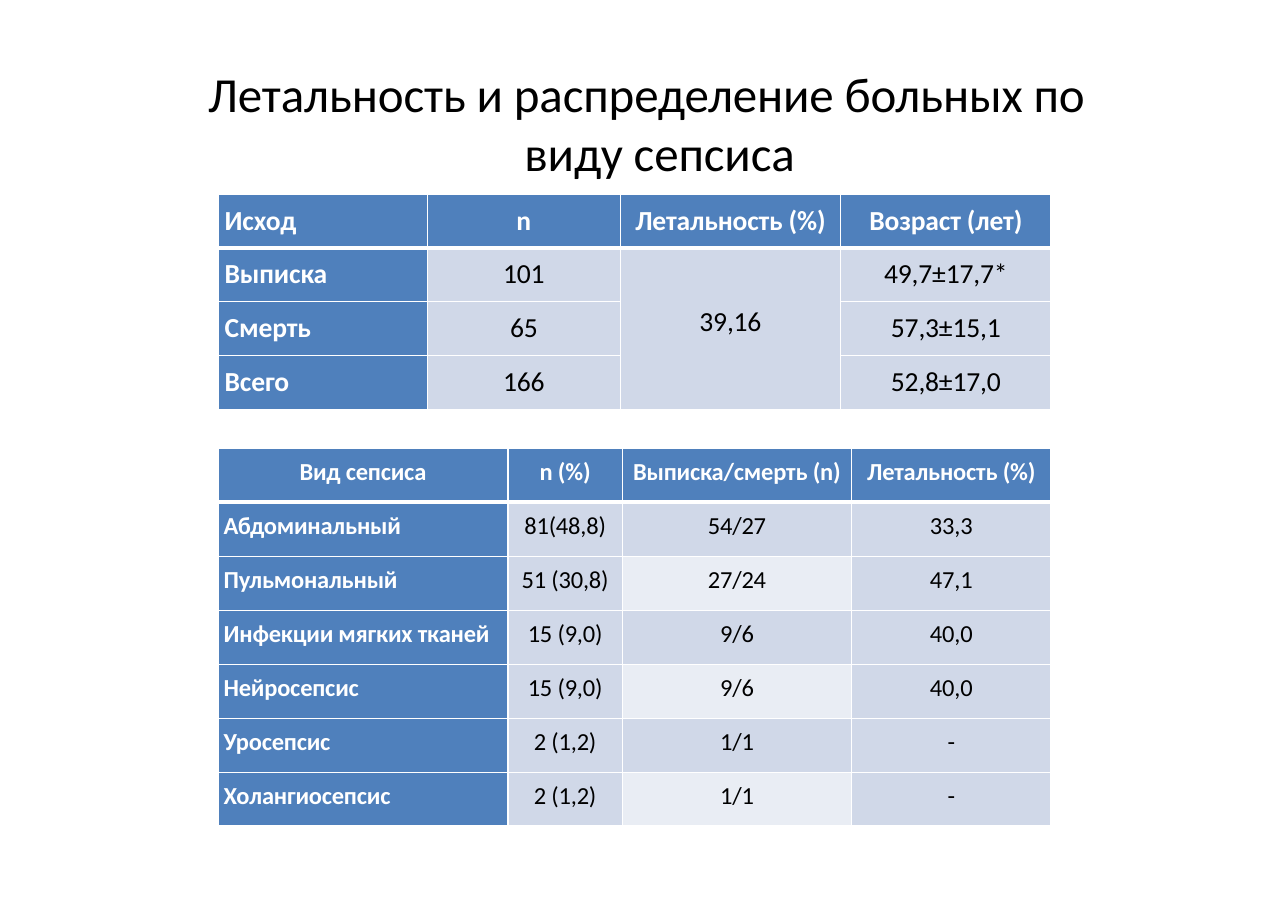
from pptx import Presentation
from pptx.dml.color import RGBColor
from pptx.enum.text import MSO_ANCHOR, PP_ALIGN
from pptx.oxml.ns import qn
from pptx.util import Inches, Pt
from lxml.etree import SubElement

BLACK = RGBColor(0x00, 0x00, 0x00)
WHITE = RGBColor(0xFF, 0xFF, 0xFF)
BLUE = RGBColor(0x4F, 0x80, 0xBC)
PALE = RGBColor(0xD0, 0xD8, 0xE8)
LIGHT = RGBColor(0xE9, 0xED, 0xF4)

TITLE = "Летальность и распределение больных по виду сепсиса"
OUTCOMES = [
    ["Исход", "n", "Летальность (%)", "Возраст (лет)"],
    ["Выписка", "101", "39,16", "49,7±17,7*"],
    ["Смерть", "65", "", "57,3±15,1"],
    ["Всего", "166", "", "52,8±17,0"],
]
SEPSIS_TYPES = [
    ["Вид сепсиса", "n (%)", "Выписка/смерть (n)", "Летальность (%)"],
    ["Абдоминальный", "81(48,8)", "54/27", "33,3"],
    ["Пульмональный", "51 (30,8)", "27/24", "47,1"],
    ["Инфекции мягких тканей", "15 (9,0)", "9/6", "40,0"],
    ["Нейросепсис", "15 (9,0)", "9/6", "40,0"],
    ["Уросепсис", "2 (1,2)", "1/1", "-"],
    ["Холангиосепсис", "2 (1,2)", "1/1", "-"],
]
ROW_HEIGHT = 0.49


def apply_format(target, values):
    for name, value in values.items():
        setattr(target, name, value)


def write_text(frame, text, size, color, bold, align):
    paragraph = frame.paragraphs[0]
    paragraph.alignment = align
    run = paragraph.add_run()
    run.text = text
    apply_format(run.font, {"name": "Calibri", "size": Pt(size), "bold": bold})
    run.font.color.rgb = color
    run.font._element.set("spc", "-10")
    return paragraph


def add_title(slide):
    title = slide.shapes.add_textbox(Inches(1.88), Inches(0.57), Inches(8.03), Inches(1.1))
    apply_format(title.text_frame, {
        "word_wrap": True, "margin_left": 0, "margin_right": 0,
        "margin_top": Inches(0.01), "margin_bottom": 0,
    })
    paragraph = write_text(title.text_frame, TITLE, 32, BLACK, False, PP_ALIGN.LEFT)
    properties = paragraph._p.get_or_add_pPr()
    properties.set("marL", str(Inches(2.88)))
    properties.set("indent", str(-Inches(2.87)))


def set_borders(cell, row):
    properties = cell._tc.get_or_add_tcPr()
    widths = {"L": 1, "R": 1, "T": 3 if row == 1 else 1, "B": 3 if row == 0 else 1}
    for side, width in widths.items():
        border = SubElement(properties, qn(f"a:ln{side}"), w=str(Pt(width)))
        fill = SubElement(border, qn("a:solidFill"))
        SubElement(fill, qn("a:srgbClr"), val=str(WHITE))


def add_data_table(slide, rows, top, widths, size, margin_top, indent, striped_column=None):
    frame = slide.shapes.add_table(
        len(rows), len(widths), Inches(1.98), Inches(top),
        Inches(sum(widths)), Inches(ROW_HEIGHT * len(rows)))
    table = frame.table
    apply_format(table, {"first_row": False, "horz_banding": False})
    for column, width in zip(table.columns, widths):
        column.width = Inches(width)
    for r, values in enumerate(rows):
        table.rows[r].height = Inches(ROW_HEIGHT)
        for c, value in enumerate(values):
            cell = table.cell(r, c)
            heading = r == 0 or c == 0
            striped = c == striped_column and r % 2 == 0
            set_borders(cell, r)
            cell.fill.solid()
            cell.fill.fore_color.rgb = BLUE if heading else LIGHT if striped else PALE
            left = c == 0 and (r > 0 or striped_column is None)
            apply_format(cell, {
                "margin_left": Inches(indent) if left else 0, "margin_right": 0,
                "margin_top": Inches(margin_top), "margin_bottom": 0,
                "vertical_anchor": MSO_ANCHOR.TOP,
            })
            if value:
                write_text(cell.text_frame, value, size, WHITE if heading else BLACK,
                           heading, PP_ALIGN.LEFT if left else PP_ALIGN.CENTER)
    return table


def main():
    deck = Presentation()
    apply_format(deck, {"slide_width": Inches(11.69), "slide_height": Inches(8.26)})
    slide = deck.slides.add_slide(deck.slide_layouts[6])
    add_title(slide)
    add_data_table(slide, SEPSIS_TYPES, 4.07, [2.63, 1.04, 2.08, 1.81], 16, 0.08, 0.05,
                   striped_column=2)
    outcomes = add_data_table(slide, OUTCOMES, 1.76, [1.9, 1.75, 2, 1.91], 18, 0.09, 0.06)
    mortality = outcomes.cell(1, 2)
    mortality.merge(outcomes.cell(3, 2))
    mortality.margin_top = Inches(0.52)
    deck.save("out.pptx")


if __name__ == "__main__":
    main()
